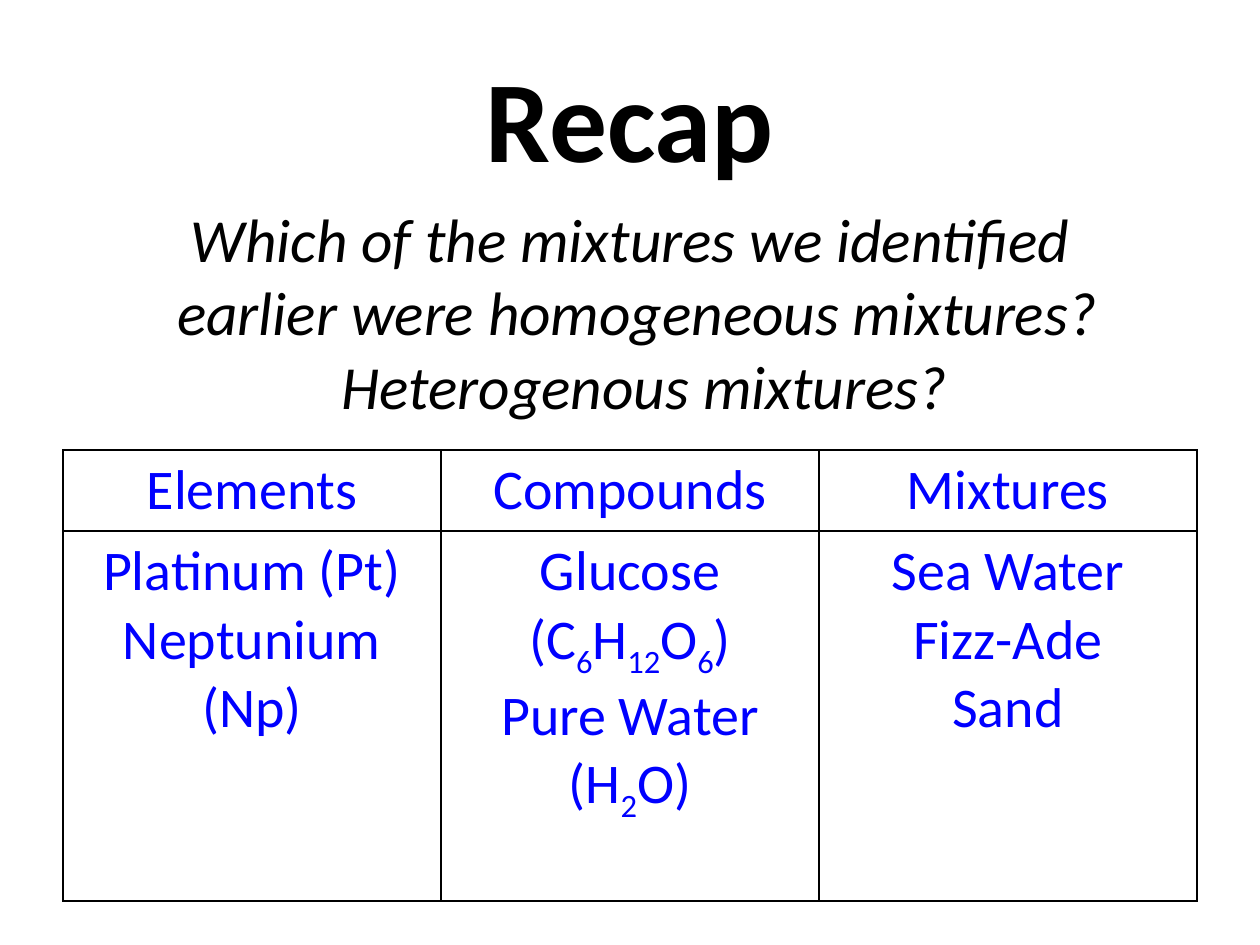
from lxml import etree
from pptx import Presentation
from pptx.dml.color import RGBColor
from pptx.enum.text import MSO_ANCHOR, PP_ALIGN
from pptx.oxml.ns import qn
from pptx.util import Pt

PX = 914400 / 126
CENTER = PP_ALIGN.CENTER
TOP, MIDDLE = MSO_ANCHOR.TOP, MSO_ANCHOR.MIDDLE
FONT = "Calibri"
COLORS = {"text": "000000", "answer": "0000FF", "border": "000000"}

QUESTION = [
    ["Which of the mixtures we identified "],
    ["earlier were homogeneous mixtures?"],
    [" Heterogenous mixtures?"],
]
CATEGORIES = [
    ("Elements", [["Platinum (Pt)"], ["Neptunium (Np)"]]),
    ("Compounds", [
        ["Glucose (C", "6", "H", "12", "O", "6", ")"],
        ["Pure Water (H", "2", "O)"],
    ]),
    ("Mixtures", [["Sea Water"], ["Fizz-Ade"], ["Sand"]]),
]


def emu(px):
    return round(px * PX)


def write_lines(frame, lines, size, color, bold=False, italic=False):
    for index, line in enumerate(lines):
        para = frame.paragraphs[0] if index == 0 else frame.add_paragraph()
        para.alignment = CENTER
        for text in line:
            span = para.add_run()
            span.text = text
            span.font.name = FONT
            span.font.size = Pt(size)
            span.font.bold = bold
            span.font.italic = italic
            span.font.color.rgb = RGBColor.from_string(COLORS[color])
            if text.isdigit():
                span.font._element.set("baseline", "-25000")


def add_text(page, bounds, lines, size, anchor, wrap=True, **style):
    box = page.shapes.add_textbox(*map(emu, bounds))
    frame = box.text_frame
    frame.word_wrap = wrap
    frame.vertical_anchor = anchor
    write_lines(frame, lines, size, "text", **style)


def outline_cell(cell):
    properties = cell._tc.get_or_add_tcPr()
    for index, side in enumerate(("lnL", "lnR", "lnT", "lnB")):
        line = etree.Element(qn(f"a:{side}"), w=str(Pt(1)))
        fill = etree.SubElement(line, qn("a:solidFill"))
        etree.SubElement(fill, qn("a:srgbClr"), val=COLORS["border"])
        properties.insert(index, line)


def fill_cell(cell, lines):
    cell.fill.background()
    outline_cell(cell)
    write_lines(cell.text_frame, lines, 32, "answer")


def add_category_table(page, left, top, column_width, row_heights):
    count = len(CATEGORIES)
    table = page.shapes.add_table(
        len(row_heights), count, emu(left), emu(top),
        emu(column_width * count), emu(sum(row_heights)),
    ).table
    table.first_row = False
    table.horz_banding = False
    for row, height in zip(table.rows, row_heights):
        row.height = emu(height)
    for index, (heading, examples) in enumerate(CATEGORIES):
        table.columns[index].width = emu(column_width)
        fill_cell(table.cell(0, index), [[heading]])
        fill_cell(table.cell(1, index), examples)


def main():
    deck = Presentation()
    deck.slide_width, deck.slide_height = emu(1260), emu(945)
    page = deck.slides.add_slide(deck.slide_layouts[6])
    add_text(page, (63, 38, 1134, 157), [["Recap"]], 66, MIDDLE, bold=True)
    add_category_table(page, 63, 450, 378, (81, 370))
    add_text(page, (155, 195, 965, 236), QUESTION, 35, TOP, wrap=False, italic=True)
    deck.save("out.pptx")


if __name__ == "__main__":
    main()
